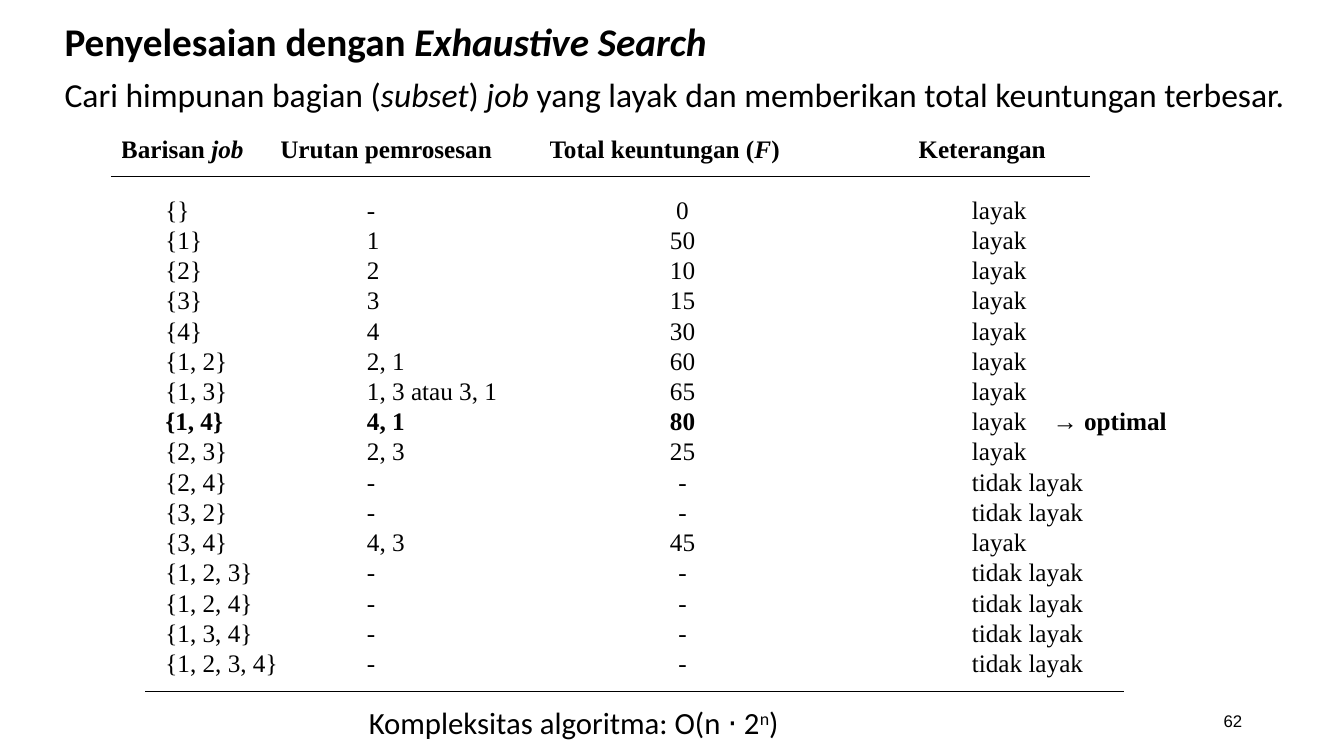
from lxml import etree
from pptx import Presentation
from pptx.dml.color import RGBColor
from pptx.enum.shapes import MSO_CONNECTOR
from pptx.enum.text import MSO_ANCHOR, MSO_AUTO_SIZE, PP_ALIGN
from pptx.oxml.ns import qn
from pptx.util import Inches, Pt

LEFT, CENTER, RIGHT = PP_ALIGN.LEFT, PP_ALIGN.CENTER, PP_ALIGN.RIGHT
TOP, MIDDLE = MSO_ANCHOR.TOP, MSO_ANCHOR.MIDDLE
STRAIGHT = MSO_CONNECTOR.STRAIGHT
NO_AUTOFIT = MSO_AUTO_SIZE.NONE

COLORS = {"text": "000000", "rule": "000000"}
HEADING = {"name": "Calibri", "size": Pt(28), "bold": True}
LEAD = {"name": "Calibri", "size": Pt(24), "bold": False}
CELL = {"name": "Times New Roman", "size": Pt(18), "bold": False}
CAPTION = {"name": "Calibri", "size": Pt(22)}
PAGE = {"name": "Arial", "size": Pt(12)}

# Column edges, and the left inset of the body text in each column
EDGES = [1.2, 2.78, 5.45, 9.11, 12.41]
INSETS = [0.44, 0.86, 0, 0.53]
NUMBER_COLUMN, NUMBER_RIGHT_INSET = 2, 1.02
HEADER_HEIGHT, ROW_HEIGHT = 0.6, 0.3
REMARK_TAB = 0.8

HEADERS = [
    [("Barisan ", {}), ("job", {"italic": True})],
    [("Urutan pemrosesan", {})],
    [("Total keuntungan (", {}), ("F", {"italic": True}), (")", {})],
    [("Keterangan", {})],
]
JOBS = [
    ("{}", "-", "0", "layak"),
    ("{1}", "1", "50", "layak"),
    ("{2}", "2", "10", "layak"),
    ("{3}", "3", "15", "layak"),
    ("{4}", "4", "30", "layak"),
    ("{1, 2}", "2, 1", "60", "layak"),
    ("{1, 3}", "1, 3 atau 3, 1", "65", "layak"),
    ("{1, 4}", "4, 1", "80", "layak"),
    ("{2, 3}", "2, 3", "25", "layak"),
    ("{2, 4}", "-", "-", "tidak layak"),
    ("{3, 2}", "-", "-", "tidak layak"),
    ("{3, 4}", "4, 3", "45", "layak"),
    ("{1, 2, 3}", "-", "-", "tidak layak"),
    ("{1, 2, 4}", "-", "-", "tidak layak"),
    ("{1, 3, 4}", "-", "-", "tidak layak"),
    ("{1, 2, 3, 4}", "-", "-", "tidak layak"),
]
OPTIMAL = "{1, 4}"


def set_attributes(target, values):
    for name, value in values.items():
        setattr(target, name, value)


def write_runs(paragraph, runs, style):
    """Add (text, changes) runs in a base style."""
    for text, changes in runs:
        run = paragraph.add_run()
        run.text = text
        set_attributes(run.font, {**style, **changes})
        run.font.color.rgb = RGBColor.from_string(COLORS["text"])


def place_heading(placeholder, box, runs, style):
    left, top, width, height = map(Inches, box)
    set_attributes(placeholder, {"left": left, "top": top, "width": width, "height": height})
    frame = placeholder.text_frame
    set_attributes(frame, {"auto_size": NO_AUTOFIT, "vertical_anchor": MIDDLE,
                           "word_wrap": True, "margin_top": 0, "margin_bottom": 0})
    paragraph = frame.paragraphs[0]
    properties = paragraph._p.get_or_add_pPr()
    properties.set("marL", "0")
    properties.set("indent", "0")
    etree.SubElement(properties, qn("a:buNone"))
    set_attributes(paragraph, {"alignment": LEFT, "line_spacing": 0.9, "space_before": Pt(0)})
    write_runs(paragraph, runs, style)


def fill_cell(cell, runs, left=0, right=0, alignment=LEFT):
    cell.fill.background()
    set_attributes(cell, {"margin_left": Inches(left), "margin_right": Inches(right),
                          "margin_top": 0, "margin_bottom": 0, "vertical_anchor": TOP})
    paragraph = cell.text_frame.paragraphs[0]
    paragraph.alignment = alignment
    write_runs(paragraph, runs, CELL)
    return paragraph


def place_job_table(slide, top):
    height = HEADER_HEIGHT + ROW_HEIGHT * len(JOBS)
    frame = slide.shapes.add_table(len(JOBS) + 1, len(HEADERS), Inches(EDGES[0]), Inches(top),
                                   Inches(EDGES[-1] - EDGES[0]), Inches(height))
    table = frame.table
    set_attributes(table, {"first_row": False, "horz_banding": False})
    for column, start, end in zip(table.columns, EDGES, EDGES[1:]):
        column.width = Inches(end - start)
    for index, row in enumerate(table.rows):
        row.height = Inches(ROW_HEIGHT if index else HEADER_HEIGHT)

    # Header row
    for index, runs in enumerate(HEADERS):
        bold_runs = [(text, {"bold": True, **changes}) for text, changes in runs]
        fill_cell(table.cell(0, index), bold_runs)

    # One row per subset of jobs
    for row, job in enumerate(JOBS, start=1):
        optimal = job[0] == OPTIMAL
        for index, text in enumerate(job):
            last = index == len(job) - 1
            runs = [(text, {"bold": optimal and not last})]
            if optimal and last:
                runs += [("\t→ ", {}), ("optimal", {"bold": True})]
            is_number = index == NUMBER_COLUMN
            paragraph = fill_cell(table.cell(row, index), runs, INSETS[index],
                                  NUMBER_RIGHT_INSET if is_number else 0,
                                  CENTER if is_number else LEFT)
            if optimal and last:
                tabs = etree.SubElement(paragraph._p.get_or_add_pPr(), qn("a:tabLst"))
                etree.SubElement(tabs, qn("a:tab"), pos=str(Inches(REMARK_TAB)), algn="l")


def place_rule(slide, left, top, width):
    rule = slide.shapes.add_connector(STRAIGHT, Inches(left), Inches(top),
                                      Inches(left + width), Inches(top))
    rule.line.color.rgb = RGBColor.from_string(COLORS["rule"])
    rule.line.width = Pt(1.25)
    etree.SubElement(rule._element.spPr, qn("a:effectLst"))


def place_text(slide, box, runs, style, alignment=LEFT, wrap=True):
    text_box = slide.shapes.add_textbox(*map(Inches, box))
    frame = text_box.text_frame
    set_attributes(frame, {"word_wrap": wrap, "vertical_anchor": MIDDLE})
    paragraph = frame.paragraphs[0]
    paragraph.alignment = alignment
    write_runs(paragraph, runs, style)
    return paragraph


def build_slide(presentation):
    slide = presentation.slides.add_slide(presentation.slide_layouts[1])
    italic = {"italic": True}

    # Title and lead sentence
    place_heading(slide.shapes.title, (0.54, 0.17, 12.51, 0.53),
                  [("Penyelesaian dengan ", {}), ("Exhaustive Search", italic)], HEADING)
    place_heading(slide.placeholders[1], (0.54, 0.71, 12.51, 0.5),
                  [("Cari himpunan bagian (", {}), ("subset", italic), (") ", {}),
                   ("job", italic),
                   (" yang layak dan memberikan total keuntungan terbesar.", {})], LEAD)

    # Table of subsets between two rules
    place_job_table(slide, 1.35)
    for left, top in ((1.1, 1.75), (1.44, 6.86)):
        place_rule(slide, left, top, 9.71)

    # Complexity and page number
    caption = place_text(slide, (3.56, 6.93, 4.3, 0.47),
                         [("Kompleksitas algoritma: O(n ⋅ 2", {}), ("n", {}), (")", {})],
                         CAPTION, wrap=False)
    caption.runs[1]._r.get_or_add_rPr().set("baseline", "30000")
    place_text(slide, (9.42, 6.95, 3, 0.4), [("62", {})], PAGE, RIGHT)


def main():
    presentation = Presentation()
    presentation.slide_width, presentation.slide_height = Inches(13.33), Inches(7.5)
    build_slide(presentation)
    presentation.save("out.pptx")


if __name__ == "__main__":
    main()
